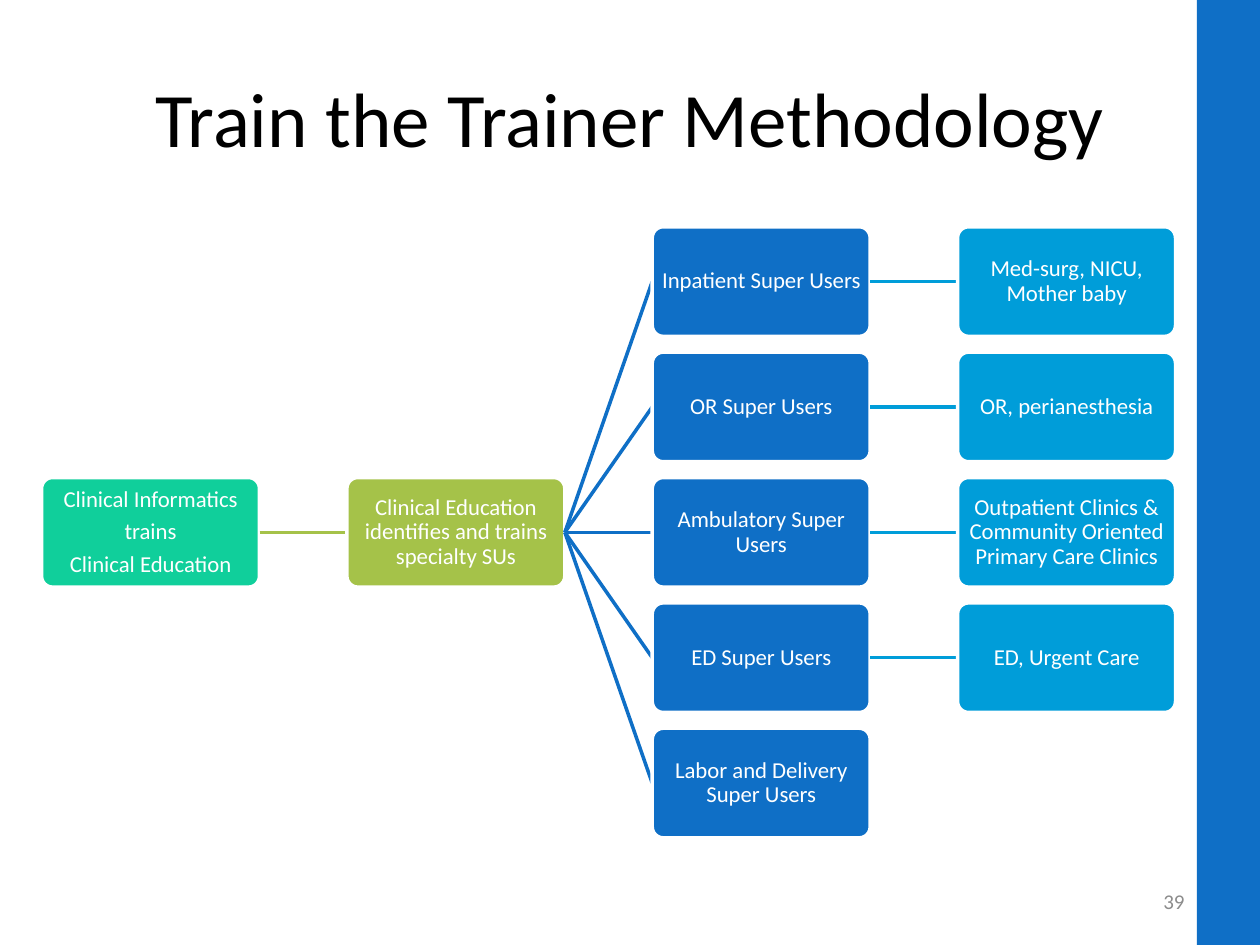
from lxml import etree
from pptx import Presentation
from pptx.dml.color import RGBColor
from pptx.enum.shapes import MSO_CONNECTOR, MSO_SHAPE
from pptx.enum.text import MSO_ANCHOR, PP_ALIGN
from pptx.oxml.ns import qn
from pptx.util import Inches, Pt

RECT, ROUND_RECT = MSO_SHAPE.RECTANGLE, MSO_SHAPE.ROUNDED_RECTANGLE
STRAIGHT = MSO_CONNECTOR.STRAIGHT
CENTER, RIGHT = PP_ALIGN.CENTER, PP_ALIGN.RIGHT
MIDDLE = MSO_ANCHOR.MIDDLE
LEFT_SIDE, RIGHT_SIDE = 1, 3

FONT = "Calibri"
BLUE, WHITE = "0F6FC6", "FFFFFF"
COLUMN_COLORS = ["10CF9B", "A5C249", BLUE, "009DD9"]
COLUMNS, ROWS = 4, 5
NODE_W, NODE_H = 1.73, 0.87

# Each node: text, row, children; its depth gives the column.
SUPER_USERS = [
    ("Inpatient Super Users", "Med-surg, NICU, Mother baby"),
    ("OR Super Users", "OR, perianesthesia"),
    ("Ambulatory Super Users",
     "Outpatient Clinics & Community Oriented Primary Care Clinics"),
    ("ED Super Users", "ED, Urgent Care"),
    ("Labor and Delivery Super Users", None),
]
GROUPS = [(users, row, [(area, row, [])] if area else [])
          for row, (users, area) in enumerate(SUPER_USERS)]
TREE = ("Clinical Informatics\ntrains\nClinical Education", 2,
        [("Clinical Education identifies and trains specialty SUs", 2, GROUPS)])


def rgb(color):
    return RGBColor.from_string(color)


def write_text(shape, text, size, color, align):
    tf = shape.text_frame
    tf.word_wrap = True
    tf.vertical_anchor = MIDDLE
    tf.text = text
    for p in tf.paragraphs:
        p.alignment = align
        p.font.name = FONT
        p.font.size = Pt(size)
        p.font.color.rgb = rgb(color)
    return tf


def add_label(s, box, text, size, color, align):
    tb = s.shapes.add_textbox(*map(Inches, box))
    write_text(tb, text, size, color, align)


def add_side_band(s, box):
    band = s.shapes.add_shape(RECT, *map(Inches, box))
    band.shadow.inherit = False
    band.fill.solid()
    band.fill.fore_color.rgb = rgb(BLUE)
    band.line.fill.background()


def add_node(s, left, top, text, color):
    node = s.shapes.add_shape(ROUND_RECT, Inches(left), Inches(top),
                              Inches(NODE_W), Inches(NODE_H))
    node.adjustments[0] = 0.1
    node.shadow.inherit = False
    node.fill.solid()
    node.fill.fore_color.rgb = rgb(color)
    node.line.color.rgb = rgb(WHITE)
    node.line.width = Pt(2)
    tf = write_text(node, text, 13, WHITE, CENTER)
    tf.margin_left = tf.margin_right = Inches(0.01)
    tf.margin_top = tf.margin_bottom = Inches(0.01)
    for p in tf.paragraphs:
        p.line_spacing = 0.9
        p.space_after = Pt(4.5)
    return node


def start_link(s, parent, color):
    link = s.shapes.add_connector(STRAIGHT, 0, 0, 0, 0)
    link.begin_connect(parent, RIGHT_SIDE)
    link.line.color.rgb = rgb(color)
    link.line.width = Pt(2)
    etree.SubElement(link._element.spPr, qn("a:effectLst"))
    return link


def add_tree(s, box, tree, depth=0, parent=None):
    """Draw a node and its descendants; links lie below the nodes they reach."""
    left, top, width, height = box
    text, row, children = tree
    color = COLUMN_COLORS[depth]
    x = left + depth * (width - NODE_W) / (COLUMNS - 1)
    y = top + row * (height - NODE_H) / (ROWS - 1)
    link = start_link(s, parent, color) if parent is not None else None
    node = add_node(s, x, y, text, color)
    if link is not None:
        link.end_connect(node, LEFT_SIDE)
    for child in children:
        add_tree(s, box, child, depth + 1, node)


def main():
    prs = Presentation()
    prs.slide_width, prs.slide_height = Inches(10), Inches(7.5)
    s = prs.slides.add_slide(prs.slide_layouts[6])
    add_side_band(s, (9.5, 0, 0.5, 7.5))
    add_label(s, (0.5, 0.3, 9, 1.25), "Train the Trainer Methodology",
              44, "000000", CENTER)
    add_tree(s, (0.33, 1.8, 9, 4.85), TREE)
    add_label(s, (7.17, 6.95, 2.33, 0.4), "39", 12, "8C8C8C", RIGHT)
    prs.save("out.pptx")


if __name__ == "__main__":
    main()
